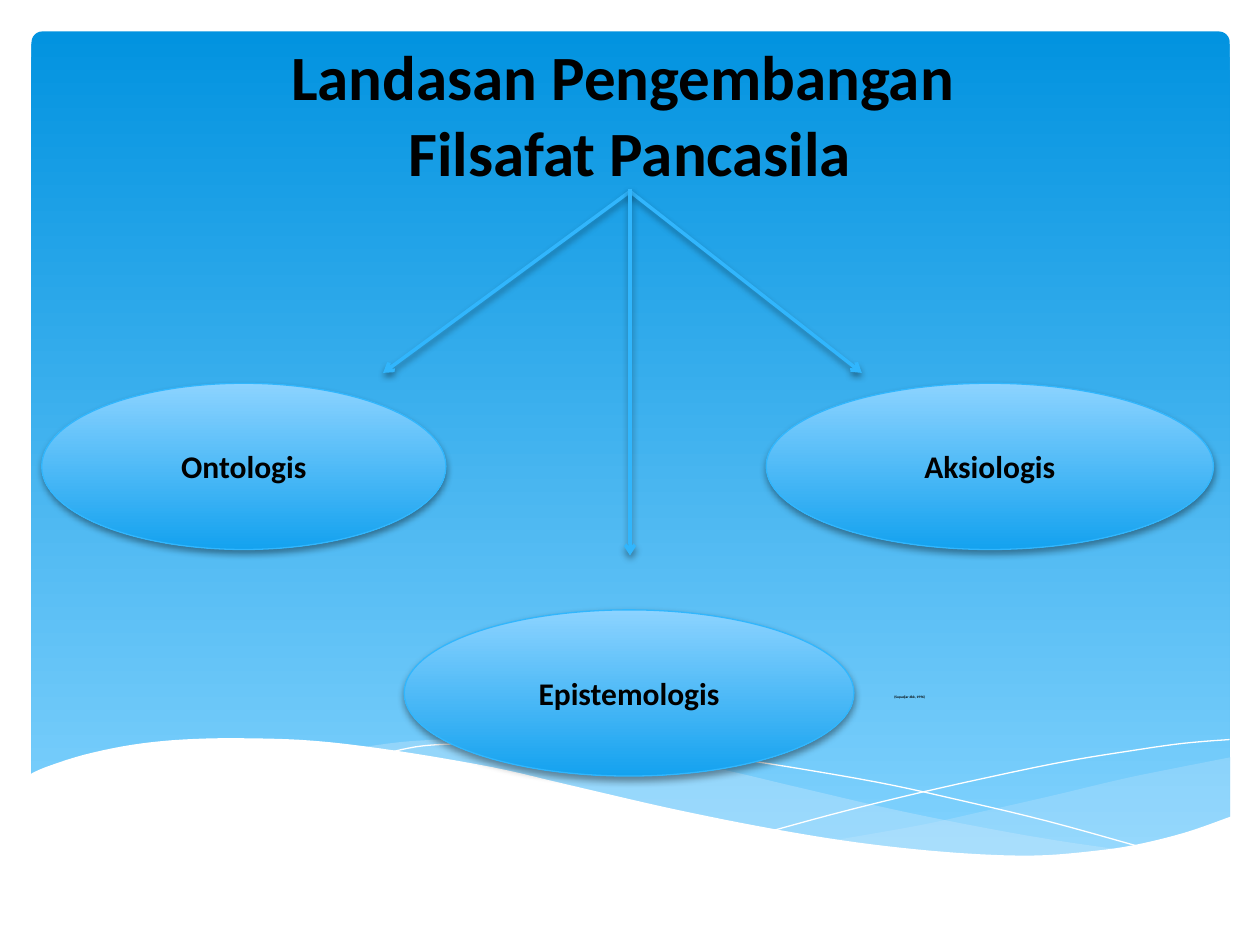
from dataclasses import dataclass

from pptx import Presentation
from pptx import util as u
from pptx.dml.color import RGBColor
from pptx.enum import shapes, text
from pptx.oxml import parse_xml
from pptx.oxml.ns import nsdecls, qn

Point = tuple[float, float]


@dataclass(frozen=True)
class Theme:
    font: str = "Calibri"
    ink: str = "000000"
    white: str = "FFFFFF"
    sky: tuple[str, str] = ("0293E0", "83D3FE")
    oval: tuple[str, str] = ("8CD3FF", "14A2EF")
    accent: str = "31B6FD"
    veil: str = "C6E7FC"
    title_size: float = 36
    label_size: float = 18
    citation_size: float = 2


@dataclass(frozen=True)
class Foundation:
    label: str
    left: float
    top: float
    width: float


@dataclass(frozen=True)
class Arrow:
    start: Point
    end: Point


THEME = Theme()
OVAL_HEIGHT = 95
FOUNDATIONS = [
    Foundation("Ontologis", 23.8, 219, 231),
    Foundation("Epistemologis", 231, 348.5, 257),
    Foundation("Aksiologis", 437.8, 219, 255.6),
]
ARROWS = [
    Arrow((360, 109.4), (218.9, 213.1)),
    Arrow((360, 109.4), (492.5, 213.1)),
    Arrow((360, 108), (360, 317.5)),
]

# Knots of the wave edges, in points
RIGHT_VEIL_TOP = [(703.4, 432.7), (674, 438.5), (642, 445), (600, 455),
                  (561.6, 463.7), (525.6, 471.6), (476.6, 480.2)]
RIGHT_VEIL_BOTTOM = [(476.6, 480.2), (508, 484.1), (536.4, 487.4), (563, 488.9),
                     (586.8, 489.6), (615.6, 488.2), (640.8, 485.3),
                     (668.9, 479), (703.4, 467.3)]
LONG_VEIL_TOP = [(643.7, 486), (603.4, 480.2), (558.7, 472.3), (509, 462.2),
                 (453.6, 449.3), (410.4, 439.2), (370.8, 432), (318.2, 425.5),
                 (273.6, 422.6), (236.2, 423.4), (206.6, 427)]
LONG_VEIL_BOTTOM = [(206.6, 427), (246.2, 432.7), (291.6, 441.4), (324, 449.3),
                    (381.6, 462.2), (433.4, 473), (479.5, 481), (530, 487.4),
                    (573.8, 489.6), (611, 489.6), (643.7, 486)]
FALLING_STRAND = [(223.2, 429.8), (242, 426.2), (270, 424.8), (300.2, 424.1),
                  (337.7, 424.8), (383.8, 428.4), (438.5, 436.3), (501.1, 447),
                  (548, 457.2), (599, 469.4), (653.8, 484.6)]
RISING_STRAND = [(442.1, 474.5), (484.6, 463), (538.6, 450), (602.6, 436.3),
                 (645.8, 429.1), (676, 424.8), (702.7, 422.6)]
FRONT_WAVE = [(16.6, 442.8), (25.9, 438.5), (48.2, 431.3), (76.3, 425.5),
              (105.1, 422.6), (139, 421.9), (180, 423.4), (226.8, 429.1),
              (281.5, 438.5), (321.8, 447.8), (380.9, 461.5), (434.2, 472.3),
              (481, 480.2), (522.7, 485.3), (560.2, 488.2), (592.6, 488.9),
              (621.4, 486.7), (647.3, 483.1), (676.8, 475.9), (703.4, 466.6)]
WAVE_FLOOR = [(703.4, 526.3), (16.6, 526.3)]


def rgb(color: str) -> RGBColor:
    return RGBColor.from_string(color)


def smooth_curve(knots: list[Point], steps: int = 5) -> list[Point]:
    """Catmull-Rom curve through the knots."""
    padded = [knots[0], *knots, knots[-1]]
    curve = [knots[0]]
    for a, b, c, d in zip(padded, padded[1:], padded[2:], padded[3:]):
        for step in range(1, steps + 1):
            t = step / steps
            curve.append(tuple(
                0.5 * (2 * q + (r - p) * t + (2 * p - 5 * q + 4 * r - s) * t ** 2
                       + (3 * q - p - 3 * r + s) * t ** 3)
                for p, q, r, s in zip(a, b, c, d)))
    return curve


def add_outline(slide, points: list[Point], closed: bool):
    start, *rest = [(u.Pt(x), u.Pt(y)) for x, y in points]
    builder = slide.shapes.build_freeform(*start, scale=1.0)
    builder.add_line_segments(rest, close=closed)
    outline = builder.convert_to_shape()
    outline.shadow.inherit = False
    return outline


def add_area(slide, points: list[Point], color: str, opacity: int = 100) -> None:
    area = add_outline(slide, points, closed=True)
    area.fill.solid()
    area.fill.fore_color.rgb = rgb(color)
    area.line.fill.background()
    if opacity < 100:
        tint = area.element.spPr.find(f".//{qn('a:srgbClr')}")
        tint.append(parse_xml(f'<a:alpha {nsdecls("a")} val="{opacity * 1000}"/>'))


def add_strand(slide, knots: list[Point]) -> None:
    strand = add_outline(slide, smooth_curve(knots), closed=False)
    strand.fill.background()
    strand.line.color.rgb = rgb(THEME.white)
    strand.line.width = u.Pt(0)


def fill_downward(shape, colors: tuple[str, str]) -> None:
    shape.fill.gradient()
    shape.fill.gradient_angle = 270
    for stop, position, color in zip(shape.fill.gradient_stops, (0, 1), colors):
        stop.position = position
        stop.color.rgb = rgb(color)


def add_soft_shadow(shape) -> None:
    properties = shape.element.spPr
    for old in properties.findall(qn("a:effectLst")):
        properties.remove(old)
    properties.append(parse_xml(
        f'<a:effectLst {nsdecls("a")}><a:outerShdw blurRad="{u.Pt(4)}" '
        f'dist="{u.Pt(2)}" dir="5400000" rotWithShape="0"><a:srgbClr val="{THEME.ink}">'
        '<a:alpha val="38000"/></a:srgbClr></a:outerShdw></a:effectLst>'))


def format_paragraph(paragraph, size: float, align=text.PP_ALIGN.CENTER) -> None:
    paragraph.alignment = align
    paragraph.font.name = THEME.font
    paragraph.font.size = u.Pt(size)
    paragraph.font.bold = True
    paragraph.font.color.rgb = rgb(THEME.ink)


def add_foundation(slide, item: Foundation) -> None:
    oval = slide.shapes.add_shape(
        shapes.MSO_SHAPE.OVAL, u.Pt(item.left), u.Pt(item.top),
        u.Pt(item.width), u.Pt(OVAL_HEIGHT))
    fill_downward(oval, THEME.oval)
    oval.line.color.rgb = rgb(THEME.accent)
    oval.line.width = u.Pt(0.75)
    add_soft_shadow(oval)
    oval.text_frame.vertical_anchor = text.MSO_ANCHOR.MIDDLE
    oval.text_frame.text = item.label
    format_paragraph(oval.text_frame.paragraphs[0], THEME.label_size)


def add_arrow(slide, item: Arrow) -> None:
    arrow = slide.shapes.add_connector(
        shapes.MSO_CONNECTOR.STRAIGHT, *map(u.Pt, item.start + item.end))
    arrow.line.color.rgb = rgb(THEME.accent)
    arrow.line.width = u.Pt(2)
    arrow.element.spPr.find(qn("a:ln")).append(
        parse_xml(f'<a:tailEnd {nsdecls("a")} type="arrow"/>'))
    add_soft_shadow(arrow)


def add_scenery(slide) -> None:
    sky = slide.shapes.add_shape(shapes.MSO_SHAPE.ROUNDED_RECTANGLE,
                                 u.Pt(18), u.Pt(18), u.Pt(684.7), u.Pt(475.2))
    sky.adjustments[0] = 0.013
    sky.shadow.inherit = False
    fill_downward(sky, THEME.sky)
    sky.line.fill.background()
    add_area(slide, smooth_curve(RIGHT_VEIL_TOP) + smooth_curve(RIGHT_VEIL_BOTTOM),
             THEME.veil, 29)
    add_area(slide, smooth_curve(LONG_VEIL_TOP) + smooth_curve(LONG_VEIL_BOTTOM),
             THEME.veil, 40)
    for knots in (FALLING_STRAND, RISING_STRAND):
        add_strand(slide, knots)
    add_area(slide, smooth_curve(FRONT_WAVE) + WAVE_FLOOR, THEME.white)


def place_title(slide) -> None:
    title = slide.shapes.title
    title.left, title.top, title.width, title.height = map(u.Pt, (36, 13, 648, 98.6))
    title.text_frame.text = "Landasan Pengembangan \nFilsafat Pancasila"
    title.text_frame.vertical_anchor = text.MSO_ANCHOR.BOTTOM
    title.text_frame.auto_size = text.MSO_AUTO_SIZE.NONE
    for paragraph in title.text_frame.paragraphs:
        format_paragraph(paragraph, THEME.title_size)
    # Bring the title in front of the scenery
    title.element.getparent().append(title.element)


def add_citation(slide) -> None:
    citation = slide.shapes.add_textbox(u.Pt(504), u.Pt(393.8), u.Pt(34.6), u.Pt(9.4))
    frame = citation.text_frame
    frame.word_wrap = False
    frame.auto_size = text.MSO_AUTO_SIZE.SHAPE_TO_FIT_TEXT
    frame.text = "(Supadjar dkk, 1996)"
    format_paragraph(frame.paragraphs[0], THEME.citation_size, text.PP_ALIGN.LEFT)


def main() -> None:
    deck = Presentation()
    deck.slide_width, deck.slide_height = u.Pt(720), u.Pt(540)
    slide = deck.slides.add_slide(deck.slide_layouts[5])
    add_scenery(slide)
    place_title(slide)
    for foundation in FOUNDATIONS:
        add_foundation(slide, foundation)
    for arrow in ARROWS:
        add_arrow(slide, arrow)
    add_citation(slide)
    deck.save("out.pptx")


if __name__ == "__main__":
    main()
